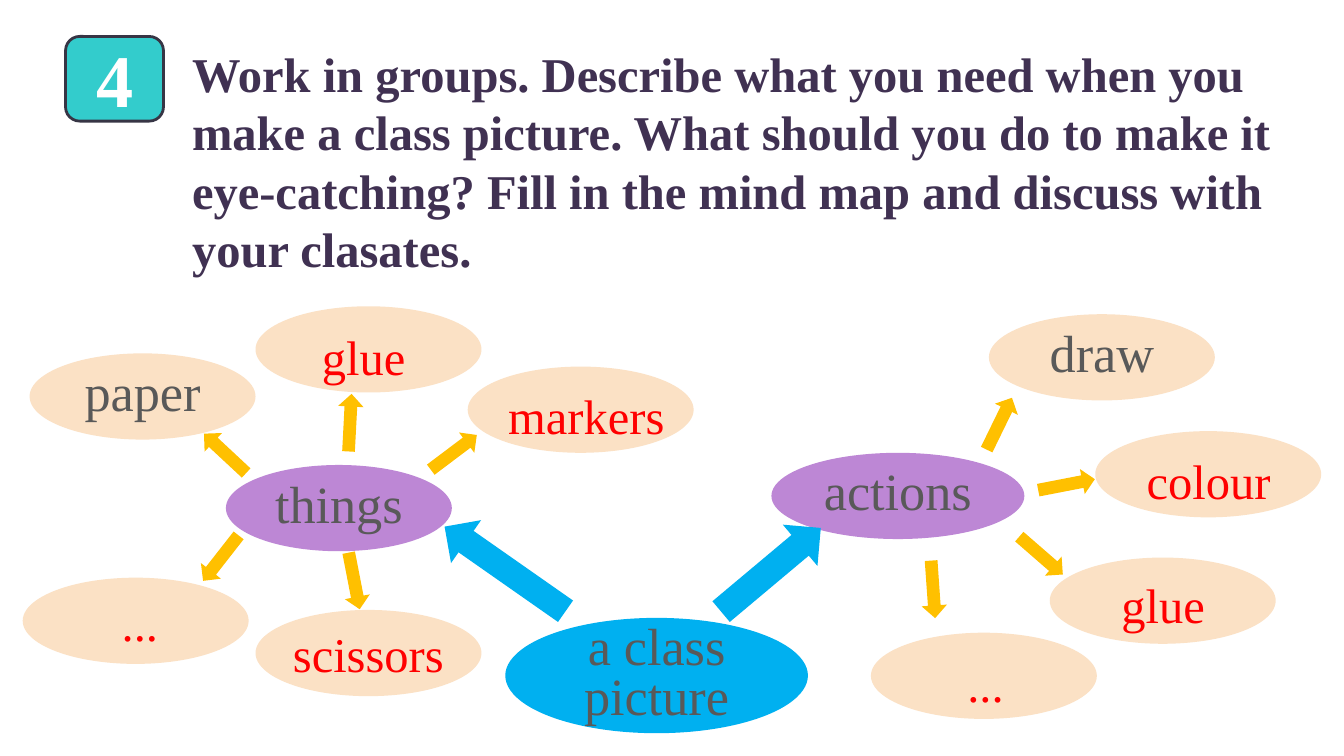
from pptx import Presentation
from pptx import util as u
from pptx.dml.color import RGBColor
from pptx.enum import shapes, text

COLOURS = {
    "ink": "403152", "teal": "33CCCC", "edge": "373545", "white": "FFFFFF",
    "blue": "00B0F0", "purple": "BD87D5", "peach": "FBE1C5",
    "gold": "FFC000", "grey": "595959", "red": "FF0000",
}
W, H = 4.27, 1.63
CENTRE = text.PP_ALIGN.CENTER


def add_shape(parent, kind, box, colour, rotation=0):
    sp = parent.shapes.add_shape(kind, *[u.Cm(v) for v in box])
    sp.shadow.inherit = False
    sp.fill.solid()
    sp.fill.fore_color.rgb = RGBColor.from_string(COLOURS[colour])
    sp.line.fill.background()
    sp.rotation = rotation
    return sp


def write(sp, words, size, colour, bold=False, **paragraph_format):
    tf = sp.text_frame
    tf.word_wrap = True
    p = tf.paragraphs[0]
    for name, value in paragraph_format.items():
        setattr(p, name, value)
    r = p.add_run()
    r.text = words
    font_format = {"name": "Times New Roman", "size": u.Pt(size), "bold": bold}
    for name, value in font_format.items():
        setattr(r.font, name, value)
    r.font.color.rgb = RGBColor.from_string(COLOURS[colour])


prs = Presentation()
prs.slide_width, prs.slide_height = u.Cm(25.4), u.Cm(14.29)
s = prs.slides.add_slide(prs.slide_layouts[6])

heading = s.shapes.add_textbox(u.Cm(3.38), u.Cm(0.71), u.Cm(21.59), u.Cm(4.7))
write(heading, "Work in groups. Describe what you need when you make a class picture. "
      "What should you do to make it eye-catching? Fill in the mind map and "
      "discuss with your clasates.", 26, "ink", True)

badge = s.shapes.add_group_shape()
tile = add_shape(badge, shapes.MSO_SHAPE.ROUNDED_RECTANGLE, (1.24, 0.69, 1.85, 1.6), "teal")
tile.line.color.rgb = RGBColor.from_string(COLOURS["edge"])
tile.line.width = u.Pt(1.5)
number = badge.shapes.add_textbox(u.Cm(1.14), u.Cm(0.51), u.Cm(2.08), u.Cm(1.96))
write(number, "4", 39.8, "white", True, alignment=CENTRE)

bubbles = [
    ("a class picture", (9.55, 11.68, 5.72, 2.18), "blue"),
    ("things", (4.27, 8.79, W, H), "purple"),
    ("paper", (0.56, 6.68, W, H), "peach"),
    ("", (4.83, 5.79, W, H), "peach"),
    ("", (8.84, 6.93, W, H), "peach"),
    ("", (4.83, 11.53, W, H), "peach"),
    ("", (0.43, 10.92, W, H), "peach"),
    ("actions", (14.58, 8.56, 4.78, H), "purple"),
    ("draw", (18.69, 5.94, W, H), "peach"),
    ("", (20.7, 8.15, W, H), "peach"),
    ("", (19.84, 10.54, W, H), "peach"),
    ("", (16.46, 11.96, W, H), "peach"),
]
for words, box, colour in bubbles:
    sp = add_shape(s, shapes.MSO_SHAPE.OVAL, box, colour)
    if words:
        sp.text_frame.vertical_anchor = text.MSO_ANCHOR.MIDDLE
        write(sp, words, 28, "grey", alignment=CENTRE, line_spacing=0.8)

main_arrows = [(8.15, 10.26, 2.79, 0.99, 35), (13.34, 10.26, 2.46, 1.02, 140)]
for *box, angle in main_arrows:
    add_shape(s, shapes.MSO_SHAPE.LEFT_ARROW, box, "blue", angle)

branch_arrows = [
    (8.03, 8.31, 143), (6.07, 7.75, 93), (3.71, 8.33, 43),
    (3.63, 10.31, 308), (6.15, 10.74, 259), (18.34, 7.77, 116),
    (17.09, 10.9, 266), (19.13, 10.26, 221), (19.61, 8.92, 169),
]
for x, y, angle in branch_arrows:
    add_shape(s, shapes.MSO_SHAPE.LEFT_ARROW, (x, y, 1.09, 0.48), "gold", angle)

answers = [
    ("glue", 5.21, 5.51, 3.33), ("markers", 9.04, 6.63, 4.09),
    ("scissors", 4.88, 11.13, 4.17), ("...", 0.56, 10.54, 4.17),
    ("colour", 21.18, 7.85, 3.33), ("glue", 20.32, 10.19, 3.33),
    ("...", 16.54, 11.68, 4.17),
]
for words, x, y, width in answers:
    sp = s.shapes.add_textbox(u.Cm(x), u.Cm(y), u.Cm(width), u.Cm(1.93))
    write(sp, words, 26, "red", alignment=CENTRE, line_spacing=1.5)

prs.save("out.pptx")
